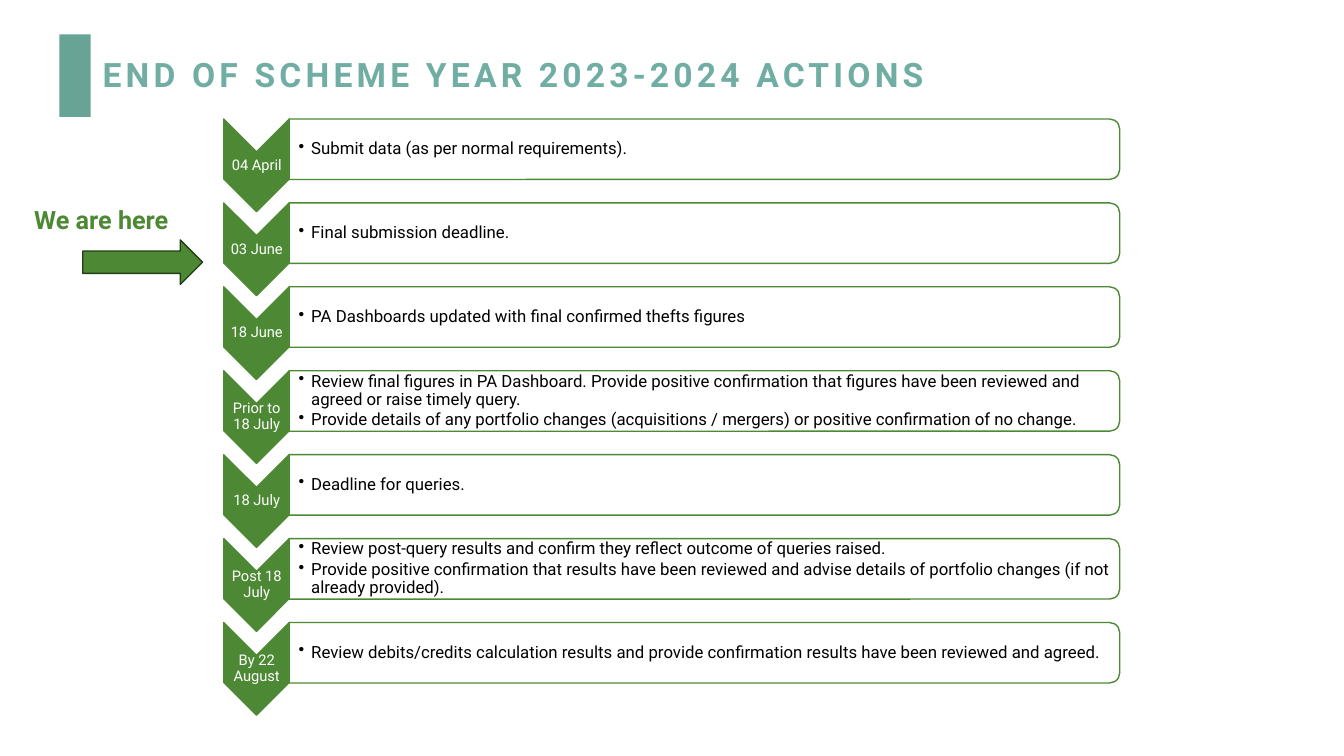
from collections import namedtuple

from lxml.etree import SubElement
from pptx import Presentation
from pptx.dml.color import RGBColor
from pptx.enum.shapes import MSO_SHAPE
from pptx.enum.text import MSO_ANCHOR, PP_ALIGN
from pptx.oxml.ns import qn
from pptx.util import Pt

Box = namedtuple("Box", "left top width height")

COLORS = {
    "bar": "68A495",
    "title": "70ADA3",
    "green": "4D8934",
    "arrow_line": "223C17",
    "white": "FFFFFF",
    "black": "000000",
}
TITLE_FORMAT = {"size": Pt(24), "bold": True}
POINTER_FORMAT = {"size": Pt(18), "bold": True}
DATE_FORMAT = {"size": Pt(10.5)}
ACTION_FORMAT = {"size": Pt(12)}

ROW_PITCH = 59.95
CHEVRON_WIDTH = 46.8
CARD_HEIGHT = 43.2

STEPS = [
    ("04 April", ["Submit data (as per normal requirements)."]),
    ("03 June", ["Final submission deadline."]),
    ("18 June", ["PA Dashboards updated with final confirmed thefts figures"]),
    ("Prior to 18 July", [
        "Review final figures in PA Dashboard. Provide positive confirmation that "
        "figures have been reviewed and agreed or raise timely query.",
        "Provide details of any portfolio changes (acquisitions / mergers) or "
        "positive confirmation of no change.",
    ]),
    ("18 July", ["Deadline for queries."]),
    ("Post 18 July", [
        "Review post-query results and confirm they reflect outcome of queries raised.",
        "Provide positive confirmation that results have been reviewed and advise "
        "details of portfolio changes (if not already provided).",
    ]),
    ("By 22 August", [
        "Review debits/credits calculation results and provide confirmation results "
        "have been reviewed and agreed.",
    ]),
]


def rgb(name):
    return RGBColor.from_string(COLORS[name])


def add_filled_shape(page, kind, box, fill, line=None):
    shape = page.shapes.add_shape(kind, *map(Pt, box))
    shape.shadow.inherit = False
    shape.fill.solid()
    shape.fill.fore_color.rgb = rgb(fill)
    if line:
        shape.line.color.rgb = rgb(line)
        shape.line.width = Pt(1)
    else:
        shape.line.fill.background()
    return shape


def add_turned_shape(page, kind, box, fill, line):
    """Add a shape turned by 90 degrees so that it covers the given box."""
    left = box.left + (box.width - box.height) / 2
    top = box.top + (box.height - box.width) / 2
    unturned = Box(left, top, box.height, box.width)
    shape = add_filled_shape(page, kind, unturned, fill, line)
    shape.rotation = 90
    return shape


def add_text(page, box, lines, color, font_format, para_format=None,
             insets=(7.2, 3.6, 7.2, 3.6), anchor=MSO_ANCHOR.MIDDLE, bullet=False):
    """Add a text box with one paragraph per line and return its frame."""
    frame = page.shapes.add_textbox(*map(Pt, box)).text_frame
    frame.word_wrap = True
    frame.vertical_anchor = anchor
    for side, inset in zip(("left", "top", "right", "bottom"), insets):
        setattr(frame, f"margin_{side}", Pt(inset))
    for index, line in enumerate(lines):
        para = frame.paragraphs[0] if index == 0 else frame.add_paragraph()
        for name, value in (para_format or {}).items():
            setattr(para, name, value)
        if bullet:
            add_bullet(para)
        span = para.add_run()
        span.text = line
        span.font.name = "Roboto"
        span.font.color.rgb = rgb(color)
        for name, value in font_format.items():
            setattr(span.font, name, value)
    return frame


def add_bullet(para):
    properties = para._p.get_or_add_pPr()
    properties.set("marL", str(Pt(9)))
    properties.set("indent", str(Pt(-9)))
    SubElement(properties, qn("a:buChar")).set("char", "•")


def add_heading(page, box):
    add_filled_shape(page, MSO_SHAPE.RECTANGLE, Box(box.left, box.top, 22.3, 59), "bar")
    title_box = Box(box.left + 23.7, box.top + 4.3, box.width - 23.7, 51.8)
    frame = add_text(page, title_box, ["END OF SCHEME YEAR 2023-2024 ACTIONS"],
                     "title", TITLE_FORMAT, {"line_spacing": 0.9})
    frame.paragraphs[0].runs[0]._r.get_or_add_rPr().set("spc", "300")


def add_pointer(page, box):
    add_text(page, Box(box.left, box.top, box.width, 29), ["We are here"],
             "green", POINTER_FORMAT, anchor=MSO_ANCHOR.TOP)
    arrow_box = Box(box.left + 41.8, box.top + 28.8, 85.6, 31.8)
    add_filled_shape(page, MSO_SHAPE.RIGHT_ARROW, arrow_box, "green", "arrow_line")


def add_step(page, box, date, actions):
    """Add a downward chevron with its date and a card with its actions."""
    chevron_box = Box(box.left, box.top, CHEVRON_WIDTH, box.height)
    add_turned_shape(page, MSO_SHAPE.CHEVRON, chevron_box, "green", "green")
    date_box = Box(box.left + 0.2, box.top + 23, CHEVRON_WIDTH, 20.2)
    add_text(page, date_box, [date], "white", DATE_FORMAT,
             {"alignment": PP_ALIGN.CENTER, "line_spacing": 0.9, "space_after": Pt(3.7)},
             insets=(0.5, 0.5, 0.5, 0.5))

    card_box = Box(box.left + CHEVRON_WIDTH, box.top,
                   box.width - CHEVRON_WIDTH, CARD_HEIGHT)
    card = add_turned_shape(page, MSO_SHAPE.ROUND_2_SAME_RECTANGLE, card_box,
                            "white", "green")
    fill_color = card._element.spPr.find(qn("a:solidFill"))[0]
    SubElement(fill_color, qn("a:alpha")).set("val", "90000")
    text_box = Box(card_box.left, card_box.top + 2.1, card_box.width - 2.1, 39)
    add_text(page, text_box, actions, "black", ACTION_FORMAT,
             {"line_spacing": 0.9, "space_after": Pt(1.8)},
             insets=(6.7, 0.6, 0.6, 0.6), bullet=True)


def add_timeline(page, box):
    chevron_height = box.height - ROW_PITCH * (len(STEPS) - 1)
    for index, (date, actions) in enumerate(STEPS):
        row = Box(box.left, box.top + index * ROW_PITCH, box.width, chevron_height)
        add_step(page, row, date, actions)


def main():
    deck = Presentation()
    deck.slide_width, deck.slide_height = Pt(960), Pt(540)
    page = deck.slides.add_slide(deck.slide_layouts[6])
    add_heading(page, Box(42.5, 24.5, 754.5, 59))
    add_pointer(page, Box(17.3, 142.6, 127.4, 60.6))
    add_timeline(page, Box(159.8, 85, 640, 425.9))
    deck.save("out.pptx")


if __name__ == "__main__":
    main()
